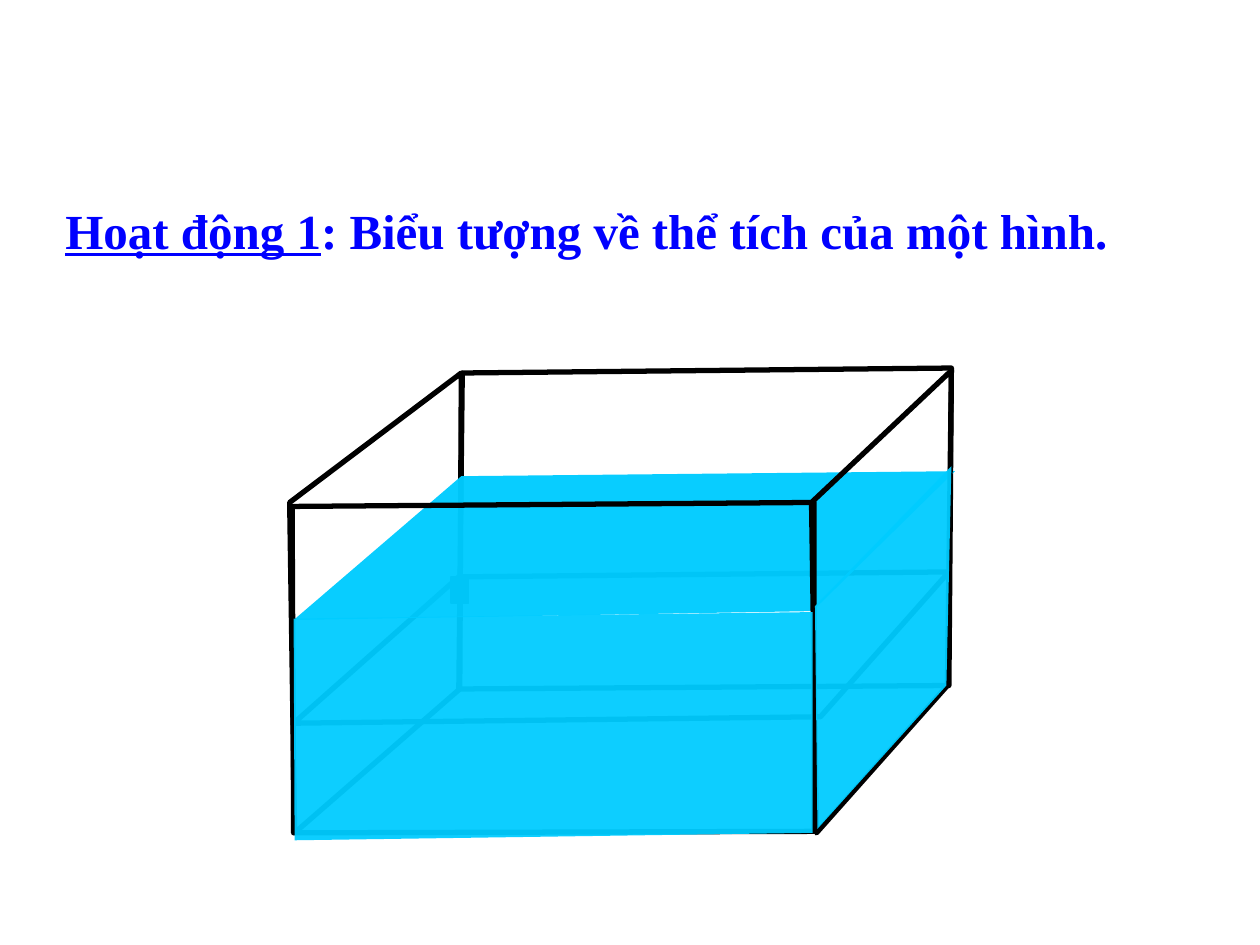
from dataclasses import dataclass

from lxml.etree import SubElement
from pptx import Presentation
from pptx.dml.color import RGBColor
from pptx.enum.shapes import MSO_SHAPE
from pptx.oxml.ns import qn
from pptx.util import Cm, Pt


@dataclass(frozen=True)
class Theme:
    edge: RGBColor = RGBColor(0x00, 0x00, 0x00)
    water: RGBColor = RGBColor(0x00, 0xCC, 0xFF)
    heading: RGBColor = RGBColor(0x00, 0x00, 0xFF)
    font: str = "Times New Roman"
    heading_size: Pt = Pt(28)
    edge_width: Pt = Pt(3)
    thin_width: Pt = Pt(0.75)


THEME = Theme()

LEFT_WALL = [(5.84, 10.13), (9.3, 7.52), (9.27, 13.89), (5.94, 16.79)]
BACK_WALL = [(9.25, 13.89), (19.13, 13.82), (19.18, 7.42), (9.32, 7.52)]
MIDDLE_LEVEL = [(5.92, 14.58), (9.25, 11.63), (19.13, 11.53), (16.54, 14.45)]
FRONT_WALL = [(5.92, 16.79), (16.41, 16.76), (16.41, 10.13), (5.89, 10.21)]
RIGHT_WALL = [(16.36, 10.13), (19.18, 7.47), (19.1, 13.82), (16.46, 16.79)]
WATER_TOP = [(5.92, 12.5), (9.3, 9.6), (19.25, 9.5), (16.38, 12.32)]
WATER_FRONT = [(5.92, 12.47), (16.38, 12.34), (16.38, 16.79), (5.94, 16.94)]
WATER_RIGHT = [(19.18, 9.4), (16.43, 12.22), (16.48, 16.71), (19.08, 13.82)]


def add_outline(s, corners):
    start, *rest = [(Cm(x), Cm(y)) for x, y in corners]
    builder = s.shapes.build_freeform(*start)
    builder.add_line_segments(rest, close=True)
    sp = builder.convert_to_shape()
    sp.shadow.inherit = False
    return sp


def add_glass(s, corners):
    sp = add_outline(s, corners)
    sp.fill.background()
    sp.line.color.rgb = THEME.edge
    sp.line.width = THEME.edge_width


def add_water(s, corners, opacity):
    sp = add_outline(s, corners)
    sp.fill.solid()
    sp.fill.fore_color.rgb = THEME.water
    color = sp.fill._xPr.find(qn("a:solidFill"))[0]
    SubElement(color, qn("a:alpha")).set("val", str(opacity * 1000))
    sp.line.fill.background()


def add_block(s, left, top, width, height):
    sp = s.shapes.add_shape(
        MSO_SHAPE.RECTANGLE, Cm(left), Cm(top), Cm(width), Cm(height)
    )
    sp.shadow.inherit = False
    sp.fill.solid()
    sp.fill.fore_color.rgb = THEME.edge
    sp.line.color.rgb = THEME.edge
    sp.line.width = THEME.thin_width


def add_heading(s, left, top, width, height, runs):
    tf = s.shapes.add_textbox(Cm(left), Cm(top), Cm(width), Cm(height)).text_frame
    tf.word_wrap = True
    p = tf.paragraphs[0]
    for text, underlined in runs:
        r = p.add_run()
        r.text = text
        r.font.name = THEME.font
        r.font.size = THEME.heading_size
        r.font.bold = True
        r.font.underline = underlined
        r.font.color.rgb = THEME.heading


def main():
    prs = Presentation()
    prs.slide_width, prs.slide_height = Cm(25.4), Cm(19.05)
    s = prs.slides.add_slide(prs.slide_layouts[6])

    add_block(s, 9.09, 11.63, 0.36, 0.53)
    for corners in (LEFT_WALL, BACK_WALL, MIDDLE_LEVEL):
        add_glass(s, corners)
    add_water(s, WATER_TOP, 97)
    for corners in (FRONT_WALL, RIGHT_WALL):
        add_glass(s, corners)
    for corners in (WATER_FRONT, WATER_RIGHT):
        add_water(s, corners, 95)

    add_heading(s, 1.07, 3.91, 23.5, 2.64, [
        ("Hoạt động 1", True),
        (": Biểu tượng về thể tích của một hình.", False),
    ])
    prs.save("out.pptx")


if __name__ == "__main__":
    main()
